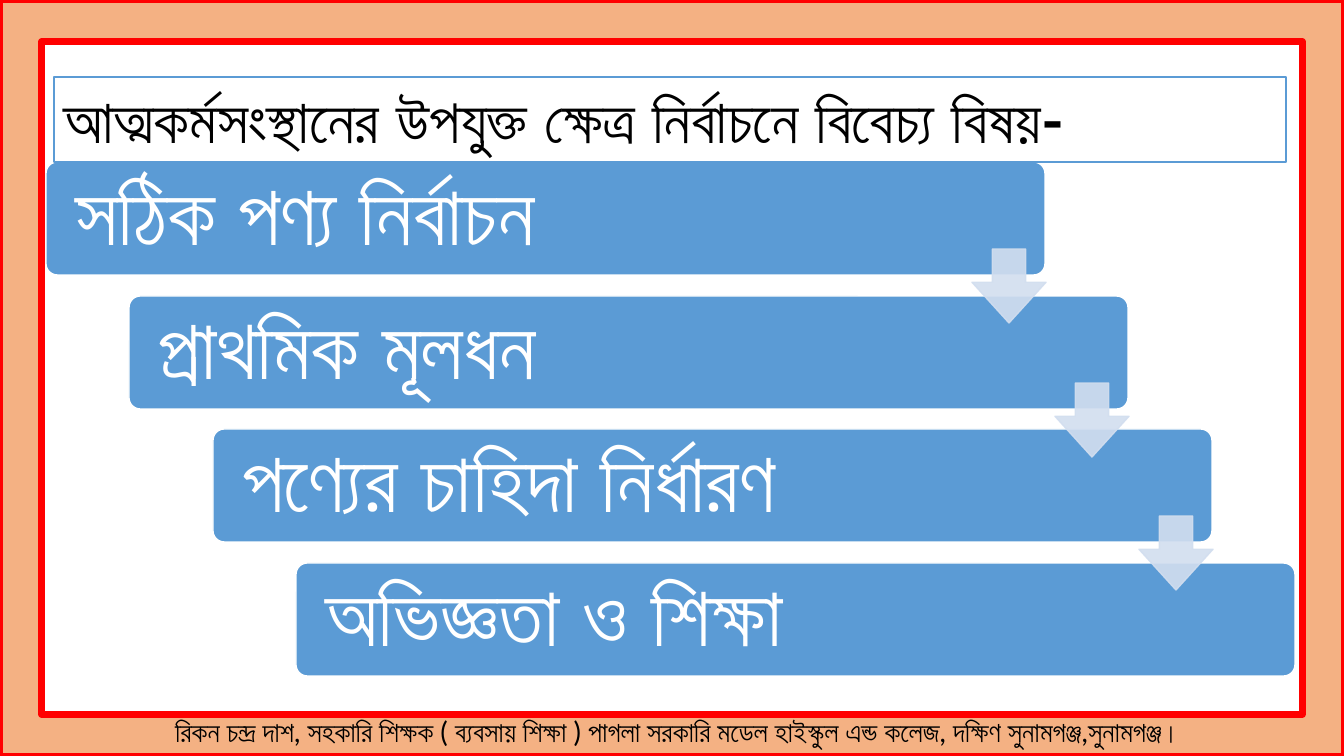
"""Build the slide on choosing a suitable field of self-employment."""
from dataclasses import dataclass

import lxml.etree
import pptx
import pptx.dml.color
import pptx.enum.shapes
import pptx.enum.text
import pptx.oxml.ns
import pptx.util

EMU_PER_PX = 914400 / 100.8
SHAPES = pptx.enum.shapes.MSO_SHAPE
ALIGN = pptx.enum.text.PP_ALIGN
ANCHOR = pptx.enum.text.MSO_ANCHOR
FIT = pptx.enum.text.MSO_AUTO_SIZE


@dataclass(frozen=True)
class Theme:
    font: str = "Lato"
    frame: str = "F4B183"
    frame_line: str = "FF0000"
    step: str = "5B9BD5"
    arrow: str = "D2DEEF"
    light: str = "FFFFFF"
    dark: str = "000000"
    title_size: int = 44
    step_size: int = 60
    footer_size: int = 20


theme = Theme()


def add_block(kind, area, fill, line, weight=1, adjustments=(), alpha=None):
    left, top, width, height = [round(px * EMU_PER_PX) for px in area]
    block = page.shapes.add_shape(kind, left, top, width, height)
    block.shadow.inherit = False
    for index, value in enumerate(adjustments):
        block.adjustments[index] = value
    block.fill.solid()
    block.fill.fore_color.rgb = pptx.dml.color.RGBColor.from_string(fill)
    block.line.color.rgb = pptx.dml.color.RGBColor.from_string(line)
    block.line.width = pptx.util.Pt(weight)
    if alpha is not None:
        for color in block._element.spPr.iter(pptx.oxml.ns.qn("a:srgbClr")):
            opacity = lxml.etree.SubElement(color, pptx.oxml.ns.qn("a:alpha"))
            opacity.set("val", str(alpha * 1000))
    return block


def write_text(box, text, size, color, bold=False, align=ALIGN.LEFT,
               anchor=ANCHOR.TOP, fit=FIT.NONE, inset=10, spacing=1.0):
    frame = box.text_frame
    frame.word_wrap = True
    frame.auto_size = fit
    frame.vertical_anchor = anchor
    frame.margin_left = frame.margin_right = round(inset * EMU_PER_PX)
    para = frame.paragraphs[0]
    para.alignment = align
    para.line_spacing = spacing
    span = para.add_run()
    span.text = text
    span.font.name = theme.font
    span.font.size = pptx.util.Pt(size)
    span.font.bold = bold
    span.font.color.rgb = pptx.dml.color.RGBColor.from_string(color)


deck = pptx.Presentation()
deck.slide_width = round(1344 * EMU_PER_PX)
deck.slide_height = round(756 * EMU_PER_PX)
page = deck.slides.add_slide(deck.slide_layouts[6])

add_block(SHAPES.FRAME, (0, 0, 1344, 756), theme.frame, theme.frame_line,
          weight=4.5, adjustments=[0.055])

footer_area = [round(px * EMU_PER_PX) for px in (53, 710, 1250, 44)]
footer = page.shapes.add_textbox(*footer_area)
write_text(footer, "রিকন চন্দ্র দাশ, সহকারি শিক্ষক ( ব্যবসায় শিক্ষা ) পাগলা সরকারি মডেল "
           "হাইস্কুল এন্ড কলেজ, দক্ষিণ সুনামগঞ্জ,সুনামগঞ্জ।",
           theme.footer_size, theme.dark, align=ALIGN.CENTER, fit=FIT.SHAPE_TO_FIT_TEXT)

steps = ["সঠিক পণ্য নির্বাচন", "প্রাথমিক মূলধন", "পণ্যের চাহিদা নির্ধারণ", "অভিজ্ঞতা ও শিক্ষা"]
corners = [(46 + round(index * 250 / 3), 162 + round(index * 401 / 3))
           for index in range(len(steps))]

for step, (left, top) in zip(steps, corners):
    bar = add_block(SHAPES.ROUNDED_RECTANGLE, (left, top, 999, 113),
                    theme.step, theme.light, adjustments=[0.1])
    write_text(bar, step, theme.step_size, theme.light, bold=True,
               anchor=ANCHOR.MIDDLE, inset=26, spacing=0.9)

for left, top in corners[:-1]:
    add_block(SHAPES.DOWN_ARROW, (left + 926, top + 87, 74, 74),
              theme.arrow, theme.arrow, adjustments=[0.45, 0.55], alpha=90)

title = add_block(SHAPES.RECTANGLE, (54, 77, 1232, 85), theme.light, theme.step)
write_text(title, "আত্মকর্মসংস্থানের উপযুক্ত ক্ষেত্র নির্বাচনে বিবেচ্য বিষয়-",
           theme.title_size, theme.dark, bold=True, fit=FIT.SHAPE_TO_FIT_TEXT)

deck.save("out.pptx")
